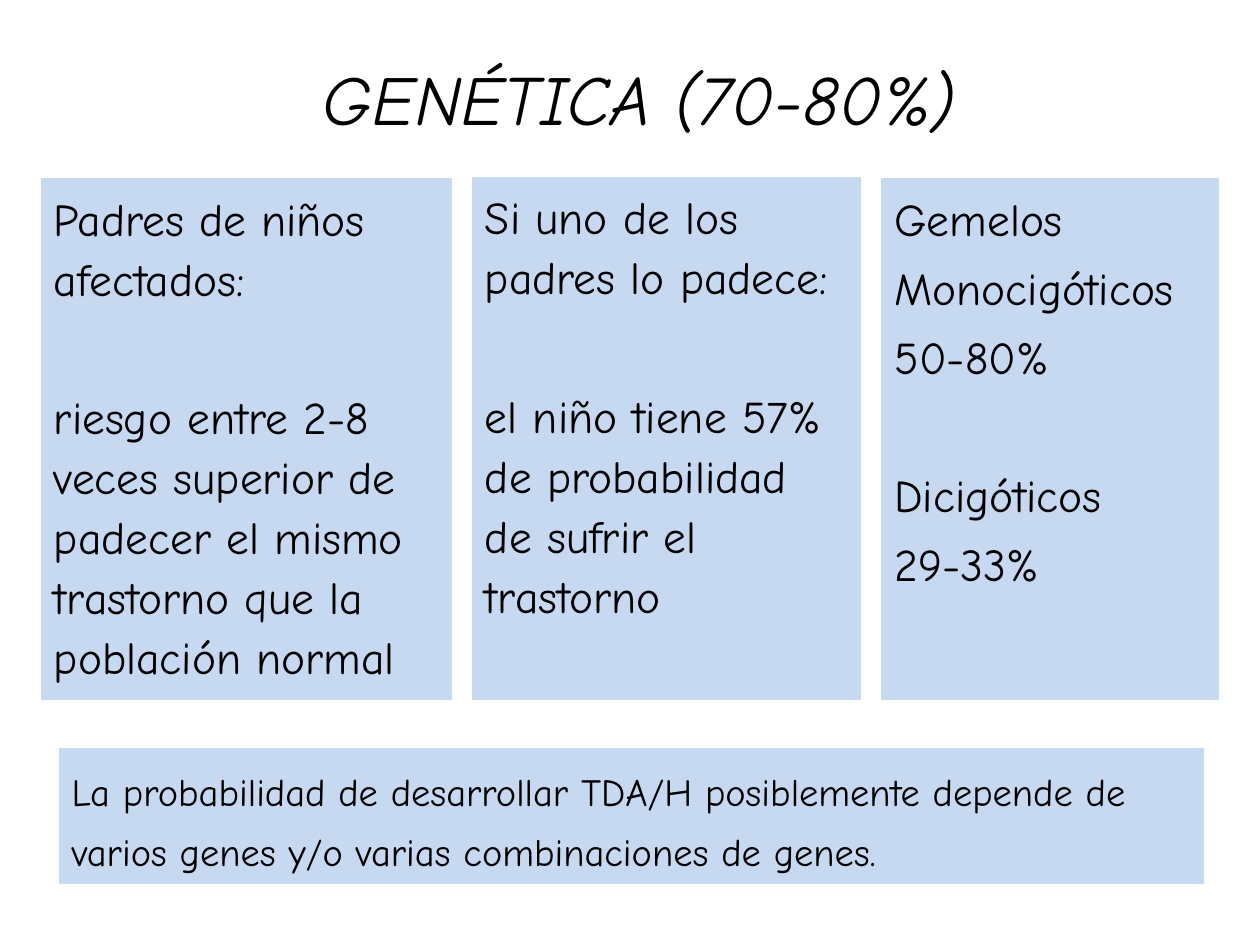
from pptx import Presentation
from pptx.dml.color import RGBColor
from pptx.enum.shapes import MSO_SHAPE as Shape
from pptx.enum.text import MSO_ANCHOR as Anchor, MSO_AUTO_SIZE as AutoSize, PP_ALIGN as Align
from pptx.util import Inches, Pt

FONT = "Comic Neue"
BLACK = "000000"
PALE_BLUE = "C6D9F1"
GROUP_GAP = 44.7

COLUMNS = [
    (0.33, 1.42, 3.25, 4.13, [
        ["Padres de niños afectados:"],
        ["riesgo entre 2-8 veces superior de padecer el mismo trastorno que la población normal"],
    ]),
    (3.75, 1.41, 3.08, 4.14, [
        ["Si uno de los padres lo padece:"],
        ["el niño tiene 57% de probabilidad de sufrir el trastorno"],
    ]),
    (7, 1.42, 2.67, 4.13, [
        ["Gemelos", "Monocigóticos", "50-80%"],
        ["Dicigóticos", "29-33%"],
    ]),
]
CONCLUSION = ("La probabilidad de desarrollar TDA/H posiblemente depende de "
              "varios genes y/o varias combinaciones de genes.")


def color(value):
    return RGBColor.from_string(value)


def format_runs(paragraph, size, italic=False):
    for run in paragraph.runs:
        run.font.name = FONT
        run.font.size = Pt(size)
        run.font.italic = italic
        run.font.color.rgb = color(BLACK)


def set_title(slide, text):
    title = slide.shapes.title
    title.left, title.top = Inches(0.7), Inches(0.31)
    title.width, title.height = Inches(8.75), Inches(0.92)
    text_frame = title.text_frame
    text_frame.text = text
    text_frame.auto_size = AutoSize.NONE
    text_frame.vertical_anchor = Anchor.MIDDLE
    paragraph = text_frame.paragraphs[0]
    paragraph.alignment = Align.CENTER
    format_runs(paragraph, 40, italic=True)


def add_panel(slide, left, top, width, height, groups, size=26, line_spacing=1.1):
    panel = slide.shapes.add_shape(
        Shape.RECTANGLE, Inches(left), Inches(top), Inches(width), Inches(height))
    panel.shadow.inherit = False
    panel.fill.solid()
    panel.fill.fore_color.rgb = color(PALE_BLUE)
    panel.line.color.rgb = color(PALE_BLUE)
    panel.line.width = Pt(0.75)
    text_frame = panel.text_frame
    text_frame.word_wrap = True
    text_frame.vertical_anchor = Anchor.TOP
    text_frame.text = "\n".join(line for group in groups for line in group)
    for paragraph in text_frame.paragraphs:
        paragraph.alignment = Align.LEFT
        paragraph.line_spacing = line_spacing
        paragraph.space_before = Pt(size * 0.2)
        format_runs(paragraph, size)
    start = 0
    for group in groups[:-1]:
        start += len(group)
        text_frame.paragraphs[start].space_before = Pt(GROUP_GAP)


def main():
    presentation = Presentation()
    presentation.slide_width = Inches(10)
    presentation.slide_height = Inches(7.5)
    slide = presentation.slides.add_slide(presentation.slide_layouts[5])
    set_title(slide, "GENÉTICA (70-80%)")
    for left, top, width, height, groups in COLUMNS:
        add_panel(slide, left, top, width, height, groups)
    add_panel(slide, 0.47, 5.94, 9.08, 1.07, [[CONCLUSION]], size=22, line_spacing=1.3)
    presentation.save("out.pptx")


if __name__ == "__main__":
    main()
